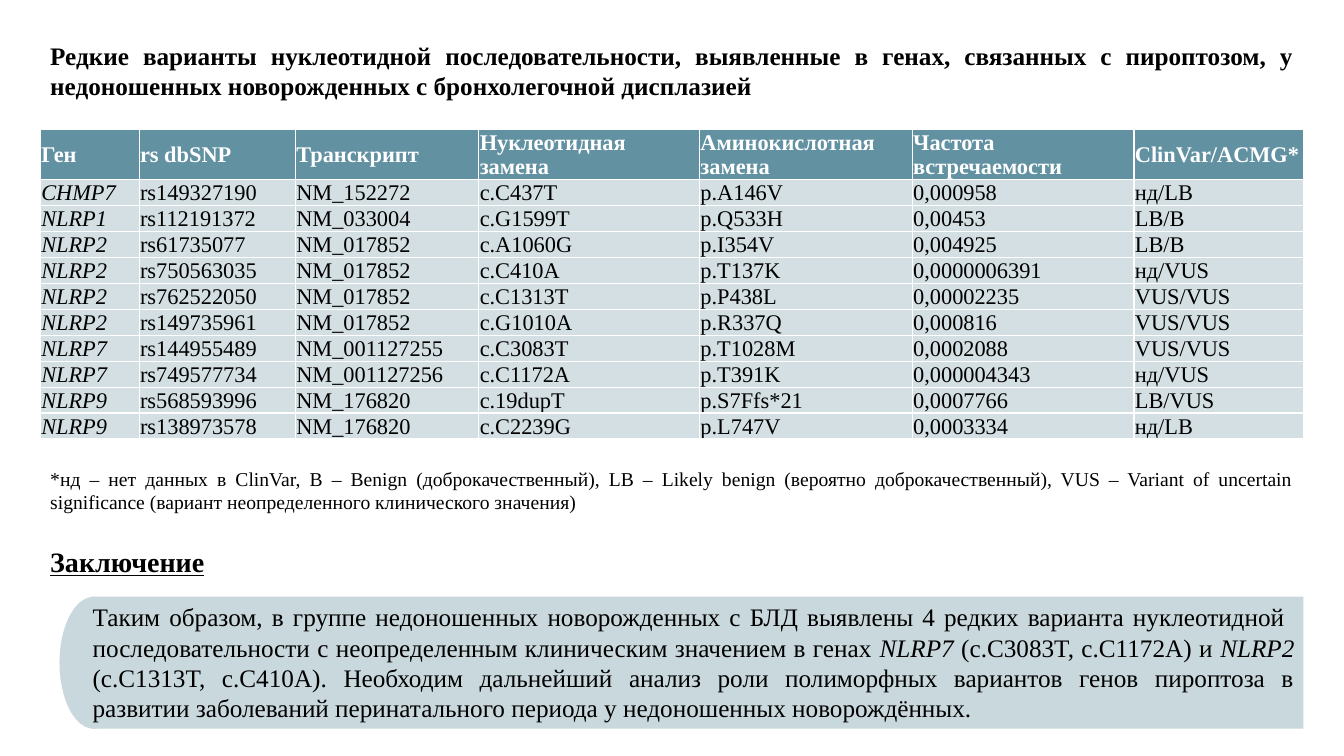
"""Build a slide with a table of rare gene variants and a conclusion."""
from dataclasses import dataclass

from lxml import etree
from pptx import Presentation
from pptx import util as u
from pptx.dml.color import RGBColor
from pptx.enum import shapes as es
from pptx.enum import text as et
from pptx.oxml import ns


@dataclass(frozen=True)
class Theme:
    font: str = "Times New Roman"
    ink: str = "000000"
    white: str = "FFFFFF"
    head: str = "6291A2"
    body: str = "D4DFE3"
    panel: str = "C9D8DD"
    title: int = 18
    section: int = 20
    cell: int = 16
    note: int = 14


@dataclass(frozen=True)
class Area:
    col: float
    row: float
    wide: float
    high: float

    def emu(self) -> tuple[int, ...]:
        return tuple(grid(n) for n in (self.col, self.row, self.wide, self.high))


@dataclass(frozen=True)
class Label:
    area: Area
    pieces: tuple[str, ...]
    size: int
    bold: bool = False
    under: bool = False


@dataclass(frozen=True)
class Form:
    kind: es.MSO_SHAPE
    area: Area


THEME = Theme()
COLS, ROWS = 133.33, 75
LEFT, WIDE = 4, 125.3

LABELS = (
    Label(Area(LEFT, 3.5, WIDE, 7.1), (
        "Редкие варианты нуклеотидной последовательности, выявленные в генах, "
        "связанных с пироптозом, у недоношенных новорожденных с "
        "бронхолегочной дисплазией",), THEME.title, bold=True),
    Label(Area(LEFT, 53.5, 124, 4.4), ("Заключение",), THEME.section,
          bold=True, under=True),
    Label(Area(8.2, 59.2, 121.2, 13.1), (
        "Таким образом, в группе недоношенных новорожденных с БЛД выявлены "
        "4 редких варианта нуклеотидной  последовательности с неопределенным "
        "клиническим значением в генах ",
        "NLRP7",
        " (c.C3083T, c.C1172A) и ",
        "NLRP2",
        " (c.С1313T, c.C410A). Необходим дальнейший анализ роли полиморфных "
        "вариантов генов пироптоза в развитии заболеваний перинатального "
        "периода у недоношенных новорождённых."), THEME.title),
    Label(Area(LEFT, 45.8, WIDE, 5.7), (
        "*нд – нет данных в ClinVar, B – Benign (доброкачественный), "
        "LB – Likely benign (вероятно доброкачественный), VUS – Variant of "
        "uncertain significance (вариант неопределенного клинического "
        "значения)",), THEME.note),
)

PANEL = (
    Form(es.MSO_SHAPE.RECTANGLE, Area(9.1, 59.2, 120.2, 13.1)),
    Form(es.MSO_SHAPE.OVAL, Area(5.9, 59.2, 6.8, 13.1)),
)

WIDTHS = (9.8, 15.5, 18.2, 21.9, 21.1, 22, 16.8)
HEAD_ROW, BODY_ROW = 4.3, 2.2
TABLE = (
    ("Ген", "rs dbSNP", "Транскрипт", "Нуклеотидная замена",
     "Аминокислотная замена", "Частота встречаемости", "ClinVar/ACMG*"),
    ("CHMP7", "rs149327190", "NM_152272", "c.C437T", "p.A146V", "0,000958", "нд/LB"),
    ("NLRP1", "rs112191372", "NM_033004", "c.G1599T", "p.Q533H", "0,00453", "LB/B"),
    ("NLRP2", "rs61735077", "NM_017852", "c.A1060G", "p.I354V", "0,004925", "LB/B"),
    ("NLRP2", "rs750563035", "NM_017852", "c.C410A", "p.T137K", "0,0000006391", "нд/VUS"),
    ("NLRP2", "rs762522050", "NM_017852", "c.С1313T", "p.P438L", "0,00002235", "VUS/VUS"),
    ("NLRP2", "rs149735961", "NM_017852", "c.G1010A", "p.R337Q", "0,000816", "VUS/VUS"),
    ("NLRP7", "rs144955489", "NM_001127255", "c.C3083T", "p.T1028M", "0,0002088", "VUS/VUS"),
    ("NLRP7", "rs749577734", "NM_001127256", "c.C1172A", "p.T391K", "0,000004343", "нд/VUS"),
    ("NLRP9", "rs568593996", "NM_176820", "c.19dupT", "p.S7Ffs*21", "0,0007766", "LB/VUS"),
    ("NLRP9", "rs138973578", "NM_176820", "c.C2239G", "p.L747V", "0,0003334", "нд/LB"),
)


def grid(count: float) -> int:
    return u.Inches(count / 10)


def style(font, size: int, color: str, bold: bool, slant: bool) -> None:
    font.name = THEME.font
    font.size = u.Pt(size)
    font.color.rgb = RGBColor.from_string(color)
    font.bold = bold
    font.italic = slant


def paint(fill, color: str) -> None:
    fill.solid()
    fill.fore_color.rgb = RGBColor.from_string(color)


def border(cell) -> None:
    props = cell._tc.get_or_add_tcPr()
    for spot, side in enumerate(("lnL", "lnR", "lnT", "lnB")):
        line = etree.Element(ns.qn(f"a:{side}"), w=str(u.Pt(1)))
        fill = etree.SubElement(line, ns.qn("a:solidFill"))
        etree.SubElement(fill, ns.qn("a:srgbClr"), val=THEME.white)
        props.insert(spot, line)


def draw_cell(cell, words: str, head: bool, gene: bool) -> None:
    cell.margin_left = cell.margin_right = cell.margin_top = u.Inches(0.01)
    cell.margin_bottom = 0
    anchor = et.MSO_ANCHOR
    cell.vertical_anchor = anchor.MIDDLE if head else anchor.BOTTOM
    paint(cell.fill, THEME.head if head else THEME.body)
    cell.text_frame.text = words
    run = cell.text_frame.paragraphs[0].runs[0]
    color = THEME.white if head else THEME.ink
    style(run.font, THEME.cell, color, head, gene and not head)
    border(cell)


def draw_table(slide) -> None:
    high = HEAD_ROW + BODY_ROW * (len(TABLE) - 1)
    area = Area(LEFT, 12.8, sum(WIDTHS), high)
    table = slide.shapes.add_table(len(TABLE), len(WIDTHS), *area.emu()).table
    table.horz_banding = False
    for column, wide in zip(table.columns, WIDTHS):
        column.width = grid(wide)
    for i, line in enumerate(TABLE):
        table.rows[i].height = grid(BODY_ROW if i else HEAD_ROW)
        for j, words in enumerate(line):
            draw_cell(table.cell(i, j), words, i == 0, j == 0)


def draw_panel(slide) -> None:
    group = slide.shapes.add_group_shape()
    for form in PANEL:
        shape = group.shapes.add_shape(form.kind, *form.area.emu())
        shape.shadow.inherit = False
        paint(shape.fill, THEME.panel)
        shape.line.fill.background()


def draw_label(slide, label: Label) -> None:
    frame = slide.shapes.add_textbox(*label.area.emu()).text_frame
    frame.word_wrap = True
    frame.auto_size = et.MSO_AUTO_SIZE.SHAPE_TO_FIT_TEXT
    para = frame.paragraphs[0]
    para.alignment = et.PP_ALIGN.JUSTIFY
    for i, words in enumerate(label.pieces):
        run = para.add_run()
        run.text = words
        style(run.font, label.size, THEME.ink, label.bold, i % 2 == 1)
        run.font.underline = label.under


def main() -> None:
    deck = Presentation()
    deck.slide_width, deck.slide_height = grid(COLS), grid(ROWS)
    slide = deck.slides.add_slide(deck.slide_layouts[6])
    draw_table(slide)
    draw_panel(slide)
    for label in LABELS:
        draw_label(slide, label)
    deck.save("out.pptx")


if __name__ == "__main__":
    main()
